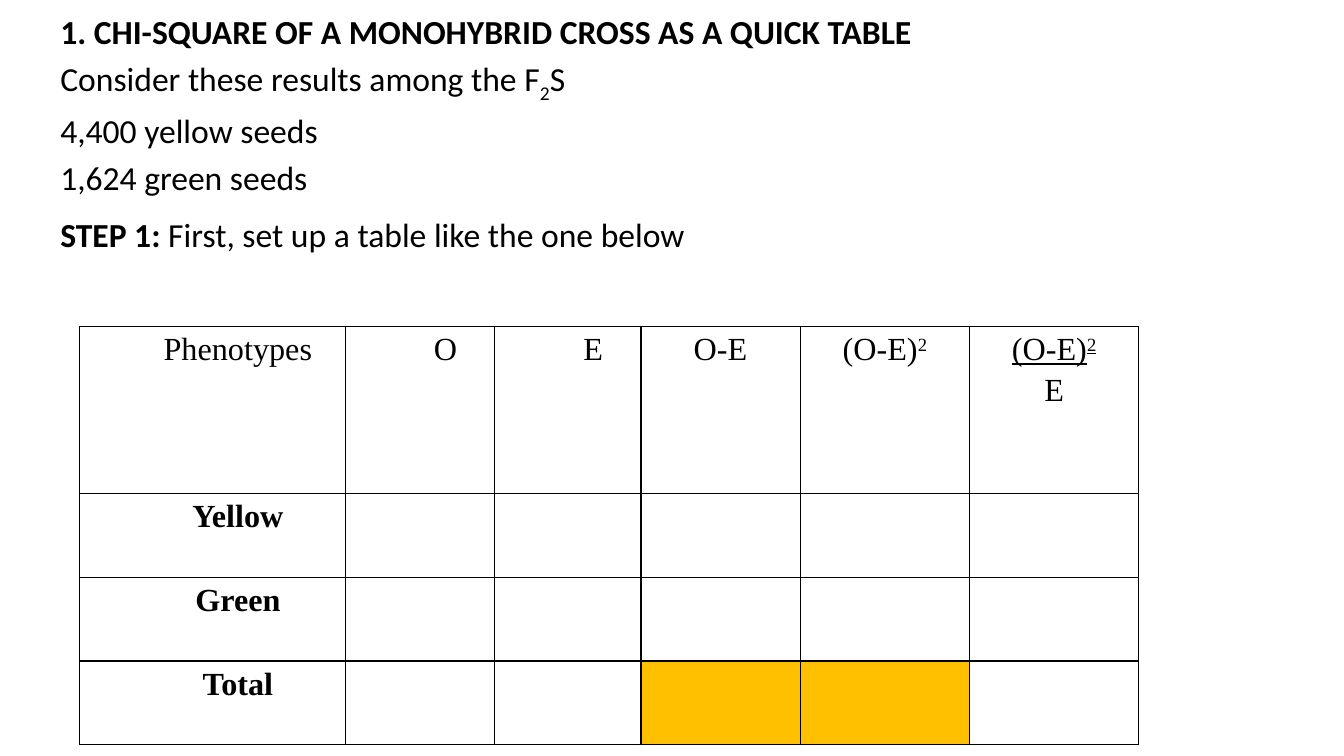
from lxml import etree
from pptx import Presentation, util as u
from pptx.dml.color import RGBColor
from pptx.enum import text as t
from pptx.oxml.ns import qn

INK, GOLD = "000000", "FFC000"


def paint(code):
    return RGBColor.from_string(code)


def write(para, words, font="Calibri", size=24, bold=False, line=False,
          base=0, indent=1.27, after=0, align=t.PP_ALIGN.LEFT):
    """Add a run to para; each newline in words becomes a line break."""
    para.alignment, para.line_spacing = align, 1.15
    para.space_before, para.space_after = u.Pt(0), u.Pt(after)
    props = para._p.get_or_add_pPr()
    props.set("marL", str(u.Cm(indent)))
    props.set("indent", "0")
    for i, part in enumerate(words.split("\n")):
        if i:
            para.add_line_break()
        run = para.add_run()
        run.text = part
        face = run.font
        face.name, face.size = font, u.Pt(size)
        face.bold, face.underline = bold, line
        face.color.rgb = paint(INK)
        if base:
            run._r.get_or_add_rPr().set("baseline", str(base * 1000))


def intro(slide, left, top, width, height):
    box = slide.shapes.add_textbox(*map(u.Cm, (left, top, width, height)))
    frame = box.text_frame
    frame.word_wrap = True
    frame.auto_size = t.MSO_AUTO_SIZE.SHAPE_TO_FIT_TEXT
    head = frame.paragraphs[0]
    write(head, "1. CHI-SQUARE OF A MONOHYBRID CROSS AS A QUICK TABLE",
          bold=True)
    data = frame.add_paragraph()
    write(data, "Consider these results among the F", after=8)
    write(data, "2", base=-25, after=8)
    write(data, "S\n4,400 yellow seeds\n1,624 green seeds", after=8)
    step = frame.add_paragraph()
    write(step, "STEP 1:", bold=True, after=8)
    write(step, " First, set up a table like the one below", after=8)


def border(cell):
    props = cell._tc.get_or_add_tcPr()
    for i, side in enumerate(("lnL", "lnR", "lnT", "lnB")):
        edge = etree.Element(qn(f"a:{side}"), w=str(u.Pt(1)))
        fill = etree.SubElement(edge, qn("a:solidFill"))
        etree.SubElement(fill, qn("a:srgbClr"), val=INK)
        props.insert(i, edge)


def label(cell, *runs, **form):
    """Fill a cell with (words, format) runs."""
    para = cell.text_frame.paragraphs[0]
    for words, extra in runs:
        write(para, words, font="Times New Roman", size=23,
              align=t.PP_ALIGN.CENTER, **form, **extra)


def grid(slide, left, top, width, height):
    cols = (2.64, 1.48, 1.45, 1.58, 1.68, 1.68)
    rows = (2, 1, 1, 1)
    table = slide.shapes.add_table(
        len(rows), len(cols), *map(u.Cm, (left, top, width, height))).table
    table.first_row = table.horz_banding = False
    for col, part in zip(table.columns, cols):
        col.width = u.Cm(width * part / sum(cols))
    for row, part in zip(table.rows, rows):
        row.height = u.Cm(height * part / sum(rows))
    for cell in table.iter_cells():
        cell.margin_left = cell.margin_right = u.Cm(0.18)
        cell.margin_top = cell.margin_bottom = 0
        cell.fill.background()
        border(cell)
    for c in (3, 4):
        fill = table.cell(3, c).fill
        fill.solid()
        fill.fore_color.rgb = paint(GOLD)

    for c, name in enumerate(("Phenotypes", "O", "E")):
        label(table.cell(0, c), (name, {}))
    for r, name in enumerate(("Yellow", "Green", "Total"), 1):
        label(table.cell(r, 0), (name, {"bold": True}))
    label(table.cell(0, 3), ("O-E", {}), indent=0)
    label(table.cell(0, 4), ("(O-E)", {}), ("2", {"base": 30}), indent=0)
    ratio = table.cell(0, 5)
    label(ratio, ("(O-E)", {"line": True}),
          ("2", {"line": True, "base": 30}), indent=0)
    ratio.text_frame.paragraphs[0].add_line_break()
    label(ratio, ("E", {}), indent=0)


def main():
    deck = Presentation()
    deck.slide_width, deck.slide_height = u.Cm(33.87), u.Cm(19.05)
    slide = deck.slides.add_slide(deck.slide_layouts[6])
    intro(slide, 0, 0, 33.87, 7.9)
    grid(slide, 2.01, 8.23, 26.69, 10.53)
    deck.save("out.pptx")


if __name__ == "__main__":
    main()
